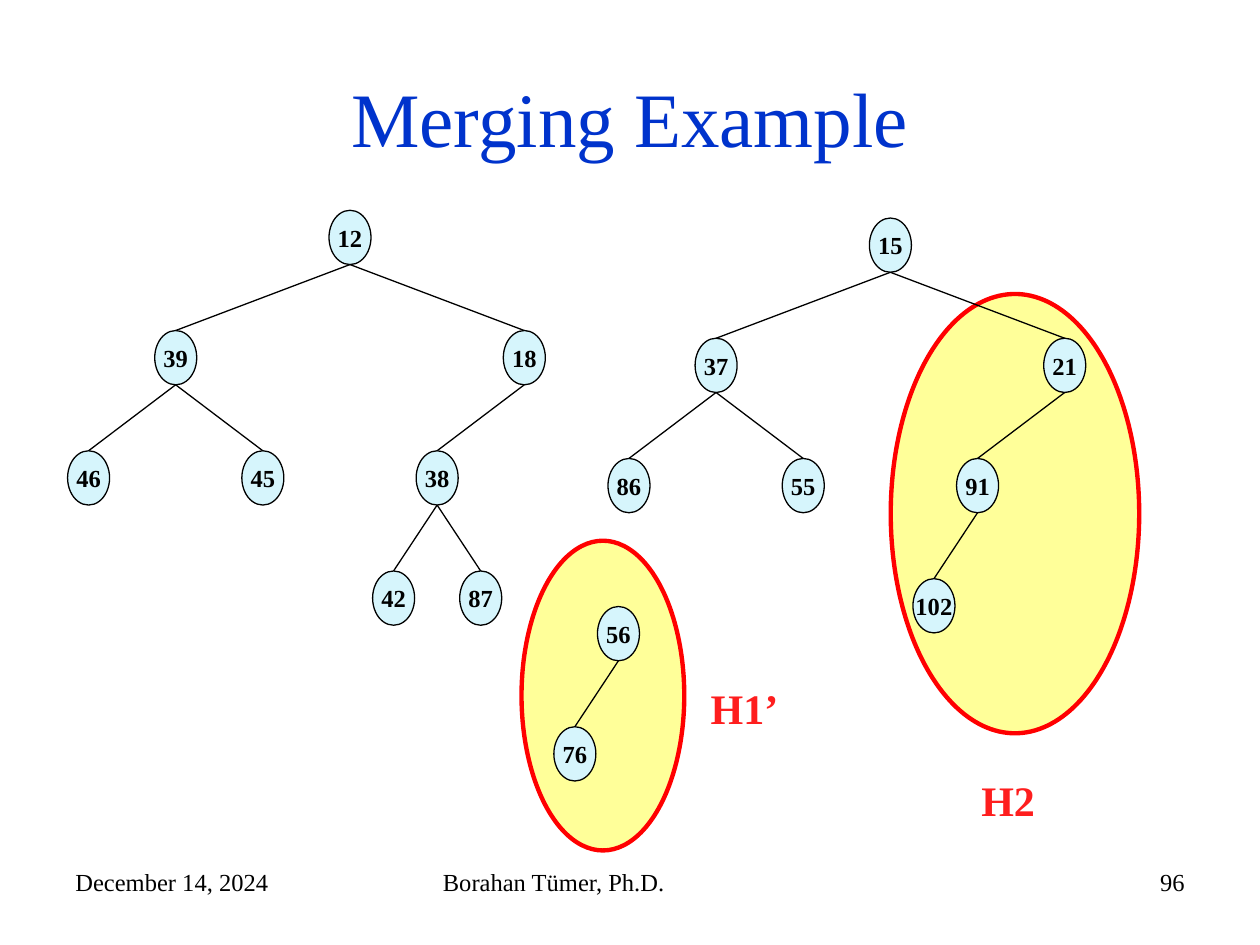
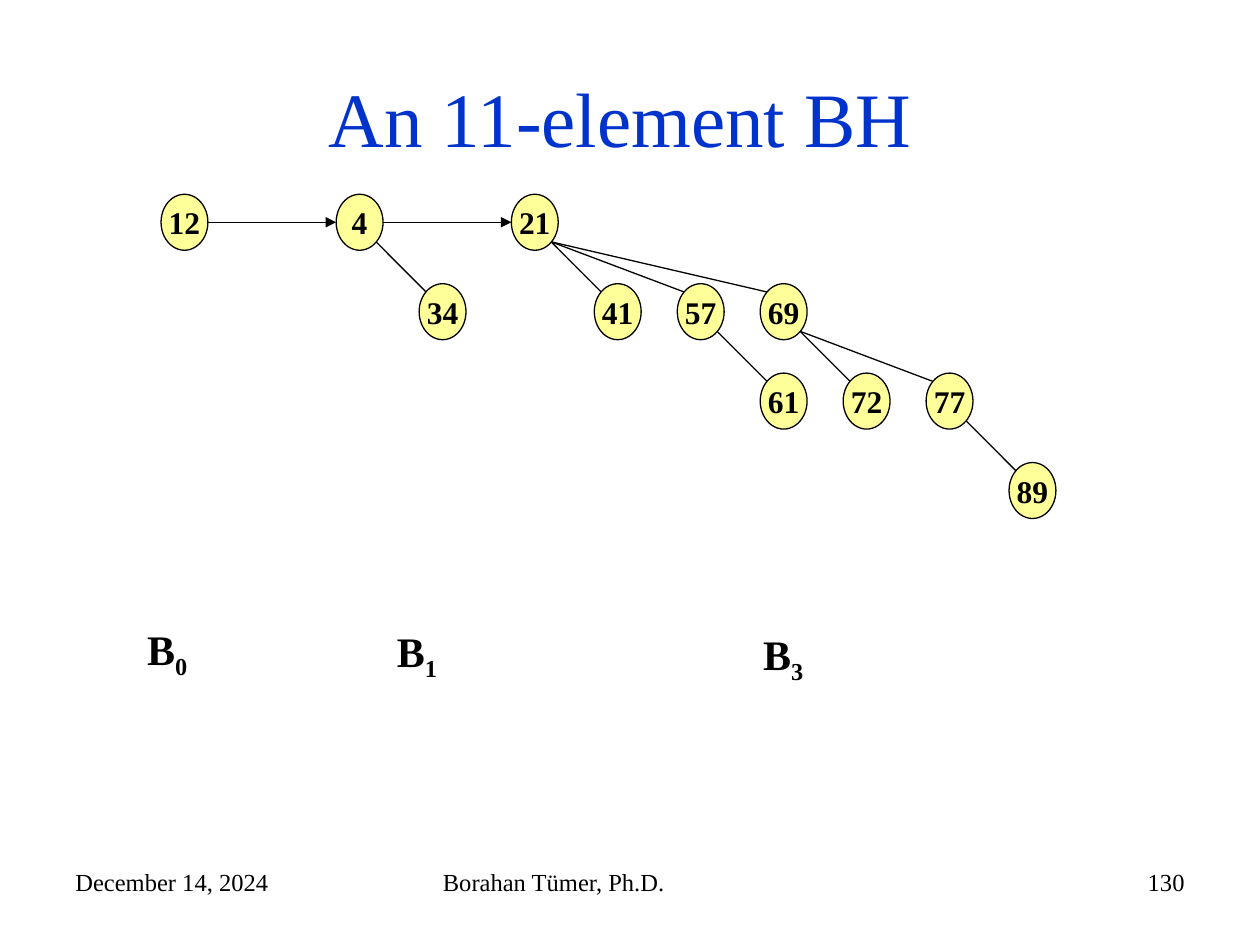
"""Build two slides on merging leftist heaps and on a binomial heap."""
import lxml.etree
import pptx
import pptx.dml.color
import pptx.enum.shapes
import pptx.enum.text
import pptx.oxml.ns
import pptx.util

Pt = pptx.util.Pt
ALIGN = pptx.enum.text.PP_ALIGN
MIDDLE = pptx.enum.text.MSO_ANCHOR.MIDDLE
OVAL = pptx.enum.shapes.MSO_SHAPE.OVAL
STRAIGHT = pptx.enum.shapes.MSO_CONNECTOR.STRAIGHT

FONT = "Times New Roman"
BLACK, BLUE, RED, LABEL_RED = "000000", "0033CC", "FF0000", "FE1E1E"
YELLOW, PALE_BLUE = "FFFF99", "D6F5FC"

MERGING = {"title": "Merging Example", "number": "96"}
ELEVEN = {"title": "An 11-element BH ", "number": "130"}
DATE, AUTHOR = "December 14, 2024", "Borahan Tümer, Ph.D."

# (key, left subtree, right subtree)
H1 = ("12",
      ("39", ("46", None, None), ("45", None, None)),
      ("18", ("38", ("42", None, None), ("87", None, None)), None))
H1_REST = ("56", ("76", None, None), None)
H2 = ("15",
      ("37", ("86", None, None), ("55", None, None)),
      ("21", ("91", ("102", None, None), None), None))
# tree, root centre x, root top, horizontal distance to its children
BINARY_TREES = [(H1, 200, 120.2, 99.6), (H1_REST, 353.4, 346.6, 24.9),
                (H2, 508.8, 124.6, 99.6)]
MARKED = [(509, 168, 142, 251), (298, 309, 93, 177)]
HEAP_LABELS = [("H1’", 399, 386.6), ("H2", 553.7, 439.2)]

# (key, children)
BINOMIAL = [("12", []),
            ("4", [("34", [])]),
            ("21", [("41", []),
                    ("57", [("61", [])]),
                    ("69", [("72", []), ("77", [("89", [])])])])]
ORDER_LABELS = [("0", 77, 352.6), ("1", 219.7, 353.8), ("3", 429, 355.5)]

NODE_W, NODE_H, LEVEL = 24, 31, 68.7
KEY_W, KEY_H, COL, ROW = 26.8, 32, 47.4, 51.1
ROOT_X, ROOT_Y, ROOT_STEP = 92, 111, 100.1
NEAR, FAR = 0.15, 0.85


def color(hex_string):
    """Turn a hex string into a colour."""
    return pptx.dml.color.RGBColor.from_string(hex_string)


def write(tf, text, size=14, fill=BLACK, bold=False, align=ALIGN.LEFT,
          anchor=None, wrap=True, inset=None, sub=""):
    """Put one formatted paragraph, with an optional subscript, in a frame."""
    tf.word_wrap = wrap
    tf.auto_size = pptx.enum.text.MSO_AUTO_SIZE.NONE
    if anchor is not None:
        tf.vertical_anchor = anchor
    if inset is not None:
        tf.margin_left = tf.margin_right = Pt(inset)
        tf.margin_top = tf.margin_bottom = Pt(inset)
    p = tf.paragraphs[0]
    p.alignment = align
    for part in filter(None, (text, sub)):
        r = p.add_run()
        r.text = part
        r.font.name, r.font.size, r.font.bold = FONT, Pt(size), bold
        r.font.color.rgb = color(fill)
    if sub:
        r.font.bold = bold
        r._r.get_or_add_rPr().set("baseline", "-25000")


def add_text(s, text, x, y, w, h, **fmt):
    """Add a text box."""
    write(s.shapes.add_textbox(Pt(x), Pt(y), Pt(w), Pt(h)).text_frame, text, **fmt)


def add_oval(s, x, y, w, h, fill, line=BLACK, width=0.75):
    """Add a filled, outlined oval."""
    sp = s.shapes.add_shape(OVAL, Pt(x), Pt(y), Pt(w), Pt(h))
    sp.shadow.inherit = False
    sp.fill.solid()
    sp.fill.fore_color.rgb = color(fill)
    sp.line.color.rgb = color(line)
    sp.line.width = Pt(width)
    return sp


def add_node(s, key, x, y, w, h, fill, size):
    """Add a heap node showing its key."""
    write(add_oval(s, x, y, w, h, fill).text_frame, key, size=size, bold=True,
          align=ALIGN.CENTER, anchor=MIDDLE, wrap=False, inset=0)


def add_edge(s, x1, y1, x2, y2, arrow=False):
    """Add a thin black line, with an arrowhead if asked."""
    cxn = s.shapes.add_connector(STRAIGHT, Pt(x1), Pt(y1), Pt(x2), Pt(y2))
    cxn.line.color.rgb = color(BLACK)
    cxn.line.width = Pt(0.75)
    qn = pptx.oxml.ns.qn
    if arrow:
        lxml.etree.SubElement(cxn.line._get_or_add_ln(), qn("a:tailEnd"),
                              type="triangle")
    lxml.etree.SubElement(cxn._element.spPr, qn("a:effectLst"))


def add_slide(prs, title, number):
    """Add a slide with its title and footer."""
    s = prs.slides.add_slide(prs.slide_layouts[5])
    sp = s.shapes.title
    sp.left, sp.top, sp.width, sp.height = Pt(36), Pt(21.6), Pt(648), Pt(90)
    write(sp.text_frame, title, size=44, fill=BLUE, align=ALIGN.CENTER,
          anchor=MIDDLE)
    for text, x, w, align in ((DATE, 36, 168, ALIGN.LEFT),
                              (AUTHOR, 246, 228, ALIGN.LEFT),
                              (number, 516, 168, ALIGN.RIGHT)):
        add_text(s, text, x, 492, w, 37.5, align=align)
    return s


def draw_binary(s, tree, cx, top, spread):
    """Draw a binary tree, halving the spread at each level."""
    key, *children = tree
    add_node(s, key, cx - NODE_W / 2, top, NODE_W, NODE_H, PALE_BLUE, 14)
    for child, side in zip(children, (-1, 1)):
        if child:
            x = cx + side * spread
            add_edge(s, cx, top + NODE_H, x, top + LEVEL)
            draw_binary(s, child, x, top + LEVEL, spread / 2)


def draw_binomial(s, tree, x, y):
    """Draw a binomial tree, one column further right for each child."""
    key, children = tree
    add_node(s, key, x, y, KEY_W, KEY_H, YELLOW, 18)
    for i, child in enumerate(children, 1):
        child_x, child_y = x + i * COL, y + ROW
        add_edge(s, x + FAR * KEY_W, y + FAR * KEY_H,
                 child_x + NEAR * KEY_W, child_y + NEAR * KEY_H)
        draw_binomial(s, child, child_x, child_y)


def build_merging(prs):
    """Draw the heaps to merge and mark the parts in play."""
    s = add_slide(prs, **MERGING)
    for box in MARKED:
        add_oval(s, *box, YELLOW, line=RED, width=2.5)
    for tree in BINARY_TREES:
        draw_binary(s, *tree)
    for text, x, y in HEAP_LABELS:
        add_text(s, text, x, y, 55.5, 36, size=24, fill=LABEL_RED, bold=True)


def build_eleven(prs):
    """Draw the root list and its binomial trees."""
    s = add_slide(prs, **ELEVEN)
    for i, tree in enumerate(BINOMIAL):
        x, mid = ROOT_X + i * ROOT_STEP, ROOT_Y + KEY_H / 2
        draw_binomial(s, tree, x, ROOT_Y)
        if i:
            add_edge(s, x - ROOT_STEP + KEY_W, mid, x, mid, arrow=True)
    for order, x, y in ORDER_LABELS:
        add_text(s, "B", x, y, 38, 36, size=24, bold=True, wrap=False, sub=order)


def main():
    """Build and save the presentation."""
    prs = pptx.Presentation()
    prs.slide_width, prs.slide_height = Pt(720), Pt(540)
    build_merging(prs)
    build_eleven(prs)
    prs.save("out.pptx")


if __name__ == "__main__":
    main()
